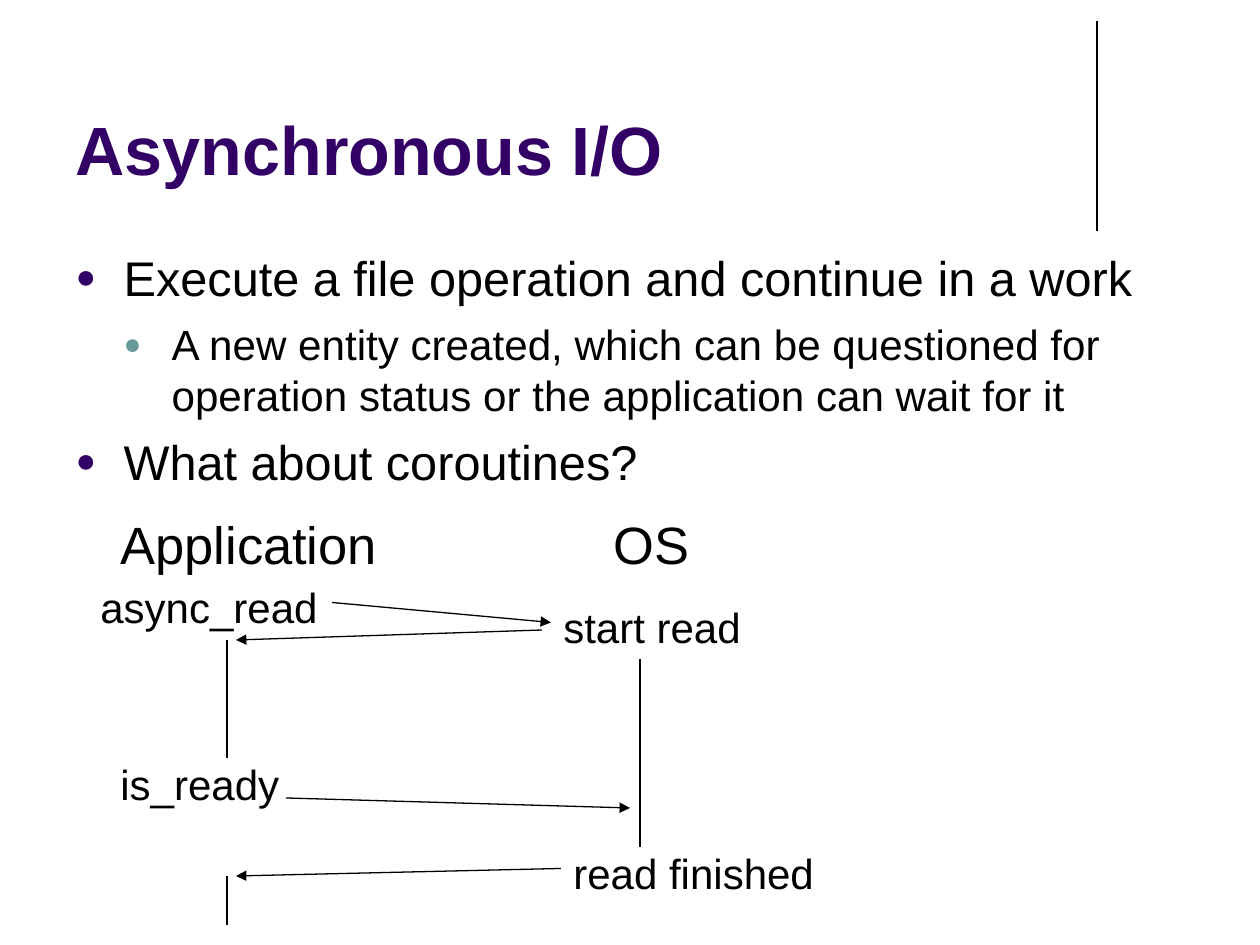
from pptx import Presentation
from pptx.dml.color import RGBColor
from pptx.enum.shapes import MSO_CONNECTOR
from pptx.enum.text import MSO_ANCHOR, MSO_AUTO_SIZE, PP_ALIGN
from pptx.oxml.ns import qn
from pptx.util import Emu, Pt
from lxml import etree

STRAIGHT = MSO_CONNECTOR.STRAIGHT
TOP, BOTTOM = MSO_ANCHOR.TOP, MSO_ANCHOR.BOTTOM
NO_FIT, GROW = MSO_AUTO_SIZE.NONE, MSO_AUTO_SIZE.SHAPE_TO_FIT_TEXT
LEFT = PP_ALIGN.LEFT

BLACK = RGBColor(0x00, 0x00, 0x00)
WHITE = RGBColor(0xFF, 0xFF, 0xFF)
PURPLE = RGBColor(0x33, 0x00, 0x66)
TEAL = RGBColor(0x66, 0x99, 0x99)

FONT = "Arial"
EMU_PER_PX = 914400 / 126
LEFT_SIDE, RIGHT_SIDE = 1, 3
LABEL_HEIGHT, HEADING_HEIGHT = 63, 77


def px(length):
    return Emu(round(length * EMU_PER_PX))


def place(shape, box):
    shape.left, shape.top, shape.width, shape.height = map(px, box)


def add_bullet(paragraph, color, indent):
    properties = paragraph._p.get_or_add_pPr()
    properties.set("marL", str(px(indent)))
    properties.set("indent", str(-px(48)))
    bullet_color = etree.SubElement(properties, qn("a:buClr"))
    etree.SubElement(bullet_color, qn("a:srgbClr"), val=str(color))
    etree.SubElement(properties, qn("a:buSzPct"), val="70000")
    etree.SubElement(properties, qn("a:buFont"), typeface=FONT)
    etree.SubElement(properties, qn("a:buChar"), char="●")


def write(paragraph, text, size=24, color=BLACK, bold=False, before=0):
    paragraph.alignment = LEFT
    paragraph.space_before = Pt(before)
    run = paragraph.add_run()
    run.text = text
    run.font.name = FONT
    run.font.size = Pt(size)
    run.font.bold = bold
    run.font.color.rgb = color


def set_frame(frame, anchor=TOP, fit=NO_FIT, wrap=True, top=11, bottom=1):
    frame.auto_size = fit
    frame.word_wrap = wrap
    frame.vertical_anchor = anchor
    frame.margin_top, frame.margin_bottom = px(top), px(bottom)


def add_line(slide, start, end, arrow=False):
    line = slide.shapes.add_connector(STRAIGHT, *map(px, (*start, *end)))
    line.line.color.rgb = BLACK
    line.line.width = Pt(0.75)
    if arrow:
        etree.SubElement(line.line._get_or_add_ln(), qn("a:tailEnd"), type="triangle")
    etree.SubElement(line._element.spPr, qn("a:effectLst"))
    return line


def add_title(slide, box):
    title = slide.shapes.title
    place(title, box)
    set_frame(title.text_frame, anchor=BOTTOM, top=6, bottom=6)
    write(title.text_frame.paragraphs[0], "Asynchronous I/O", size=39, color=PURPLE, bold=True)
    x, y, width, height = box
    rule_x = x + width - 5
    add_line(slide, (rule_x, y + 5), (rule_x, y + 215))


def add_points(slide, box):
    points = slide.placeholders[1]
    place(points, box)
    frame = points.text_frame
    set_frame(frame)
    items = [
        (0, "Execute a file operation and continue in a work"),
        (1, "A new entity created, which can be questioned for "
            "operation status or the application can wait for it"),
        (0, "What about coroutines?"),
    ]
    level_formats = [(27.8, PURPLE, 48), (24.1, TEAL, 96)]
    for index, (level, text) in enumerate(items):
        size, bullet_color, indent = level_formats[level]
        paragraph = frame.add_paragraph() if index else frame.paragraphs[0]
        paragraph.level = level
        add_bullet(paragraph, bullet_color, indent)
        write(paragraph, text, size=size, before=7 if index else 0)


def add_sequence(slide, box):
    left, top = box[:2]

    def at(x, y):
        return left + x, top + y

    def label(text, x, y, width, height=LABEL_HEIGHT, size=24):
        area = slide.shapes.add_textbox(*map(px, (*at(x, y), width, height)))
        set_frame(area.text_frame, fit=GROW, wrap=False)
        write(area.text_frame.paragraphs[0], text, size=size)
        return area

    label("Application", 20, 0, 284, HEADING_HEIGHT, 30)
    label("OS", 513, 0, 102, HEADING_HEIGHT, 30)
    async_read = label("async_read", 0, 70, 244)
    start_read = label("start read", 463, 90, 212)
    label("is_ready", 20, 247, 188)
    read_finished = label("read finished", 473, 336, 268)

    call = add_line(slide, at(246, 101), at(463, 121), arrow=True)
    call.begin_connect(async_read, RIGHT_SIDE)
    call.end_connect(start_read, LEFT_SIDE)
    add_line(slide, at(454, 129), at(148, 139), arrow=True)
    add_line(slide, at(198, 297), at(542, 307), arrow=True)
    completion = add_line(slide, at(473, 367), at(148, 375), arrow=True)
    completion.begin_connect(read_finished, LEFT_SIDE)

    for x, start, end in [(139, 139, 257), (552, 158, 346), (139, 375, 424)]:
        add_line(slide, at(x, start), at(x, end))


def main():
    deck = Presentation()
    deck.slide_width, deck.slide_height = px(1260), px(945)
    slide = deck.slides.add_slide(deck.slide_layouts[1])
    slide.background.fill.solid()
    slide.background.fill.fore_color.rgb = WHITE
    add_title(slide, (63, 16, 1039, 179))
    add_points(slide, (63, 237, 1134, 275))
    add_sequence(slide, (88, 501, 741, 424))
    deck.save("out.pptx")


if __name__ == "__main__":
    main()
